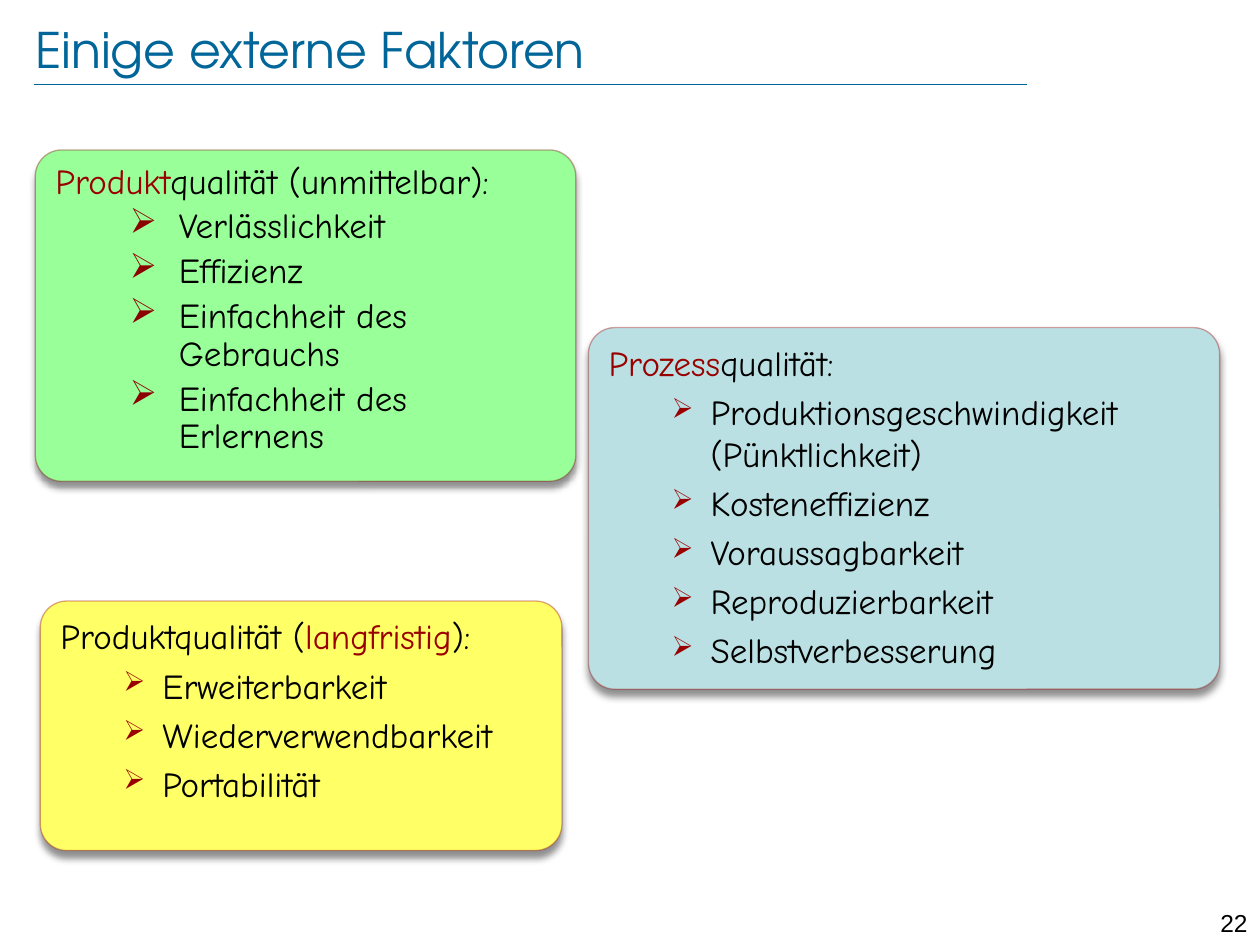
from lxml import etree
from pptx import Presentation
from pptx.dml.color import RGBColor
from pptx.enum.shapes import MSO_CONNECTOR, MSO_SHAPE
from pptx.enum.text import MSO_ANCHOR, PP_ALIGN
from pptx.oxml.ns import qn
from pptx.util import Inches, Pt

LINE = MSO_CONNECTOR.STRAIGHT
ROUNDED = MSO_SHAPE.ROUNDED_RECTANGLE
LEFT, RIGHT = PP_ALIGN.LEFT, PP_ALIGN.RIGHT
TOP, MIDDLE = MSO_ANCHOR.TOP, MSO_ANCHOR.MIDDLE

COLORS = {
    "title": "006699", "text": "000000", "accent": "990000",
    "dark_red": "800000", "bullet_red": "8B0000",
    "green": "99FF99", "blue": "BBE0E3", "yellow": "FFFF66",
}


def color(name):
    return RGBColor.from_string(COLORS[name])


def add_child(parent, tag, **attributes):
    """Append an XML element with the given attributes and return it."""
    values = {key: str(value) for key, value in attributes.items()}
    return etree.SubElement(parent, qn(tag), values)


deck = Presentation()
deck.slide_width, deck.slide_height = Inches(10), Inches(7.5)
page = deck.slides.add_slide(deck.slide_layouts[5])

rule = page.shapes.add_connector(LINE, Inches(0.27), Inches(0.67), Inches(8.15), Inches(0.67))
rule.line.color.rgb = color("title")
rule.line.width = Pt(0.25)
add_child(rule._element.spPr, "a:effectLst")

title = page.shapes.title
title.left, title.top = Inches(0.28), Inches(0.14)
title.width, title.height = Inches(8.97), Inches(0.5)
frame = title.text_frame
frame.margin_left = frame.margin_right = frame.margin_top = frame.margin_bottom = 0
frame.vertical_anchor = MIDDLE
frame.text = "Einige externe Faktoren"
frame.paragraphs[0].alignment = LEFT
font = frame.paragraphs[0].runs[0].font
font.name, font.size, font.color.rgb = "TeX Gyre Adventor", Pt(28), color("title")

number_box = page.shapes.add_textbox(Inches(9.45), Inches(7.16), Inches(0.55), Inches(0.24))
number_box.text_frame.word_wrap = True
number_box.text_frame.text = "22"
para = number_box.text_frame.paragraphs[0]
para.alignment = RIGHT
font = para.runs[0].font
font.name, font.size, font.color.rgb = "Arial", Pt(14), color("text")

# Each heading is a list of (text, color) spans
cards = [
    {"place": (0.28, 1.19, 4.29, 2.63), "fill": "green", "border": "dark_red",
     "indent": (0.98, 0.39), "bullet": "bullet_red", "bullet_size": 100, "spacing": 0.9,
     "heading": [("Produkt", "accent"), ("qualität (unmittelbar):", "text")],
     "items": ["Verlässlichkeit", "Effizienz", "Einfachheit des Gebrauchs",
               "Einfachheit des Erlernens"]},
    {"place": (4.67, 2.6, 5.01, 2.87), "fill": "blue", "border": "accent",
     "indent": (0.81, 0.31), "bullet": "accent", "bullet_size": 80, "spacing": 1.0,
     "heading": [("Prozess", "accent"), ("qualität:", "text")],
     "items": ["Produktionsgeschwindigkeit (Pünktlichkeit)", "Kosteneffizienz",
               "Voraussagbarkeit", "Reproduzierbarkeit", "Selbstverbesserung"]},
    {"place": (0.32, 4.77, 4.14, 1.98), "fill": "yellow", "border": "accent",
     "indent": (0.81, 0.31), "bullet": "accent", "bullet_size": 80, "spacing": 1.0,
     "heading": [("Produktqualität (", "text"), ("langfristig", "accent"), ("):", "text")],
     "items": ["Erweiterbarkeit", "Wiederverwendbarkeit", "Portabilität"]},
]
CORNER_RADIUS = 0.21

for card in cards:
    box = page.shapes.add_shape(ROUNDED, *map(Inches, card["place"]))
    box.adjustments[0] = CORNER_RADIUS / card["place"][3]
    box.fill.solid()
    box.fill.fore_color.rgb = color(card["fill"])
    box.line.color.rgb = color(card["border"])
    box.line.width = Pt(0.75)
    border_color = box.line._ln.find(".//" + qn("a:srgbClr"))
    add_child(border_color, "a:alpha", val=34000)

    box.shadow.inherit = False
    effects = box._element.spPr.find(qn("a:effectLst"))
    shadow = add_child(effects, "a:outerShdw", blurRad=Pt(4), dist=Pt(4),
                       dir=90 * 60000, algn="t", rotWithShape=0)
    shadow_color = add_child(shadow, "a:srgbClr", val=COLORS["text"])
    add_child(shadow_color, "a:alpha", val=43000)

    frame = box.text_frame
    frame.word_wrap = True
    frame.vertical_anchor = TOP
    rows = [card["heading"]] + [[(item, "text")] for item in card["items"]]
    for index, spans in enumerate(rows):
        para = frame.add_paragraph() if index else frame.paragraphs[0]
        if index:
            indent, hanging = card["indent"]
            para.level = 1
            properties = para._p.get_or_add_pPr()
            properties.set("marL", str(Inches(indent)))
            properties.set("indent", str(-Inches(hanging)))
            bullet_color = add_child(properties, "a:buClr")
            add_child(bullet_color, "a:srgbClr", val=COLORS[card["bullet"]])
            add_child(properties, "a:buSzPct", val=card["bullet_size"] * 1000)
            add_child(properties, "a:buChar", char="➢")
            para.space_before = Pt(4)
        para.alignment = LEFT
        para.line_spacing = card["spacing"]
        for text, span_color in spans:
            span = para.add_run()
            span.text = text
            span.font.name, span.font.size = "Comic Neue", Pt(20)
            span.font.color.rgb = color(span_color)

deck.save("out.pptx")
